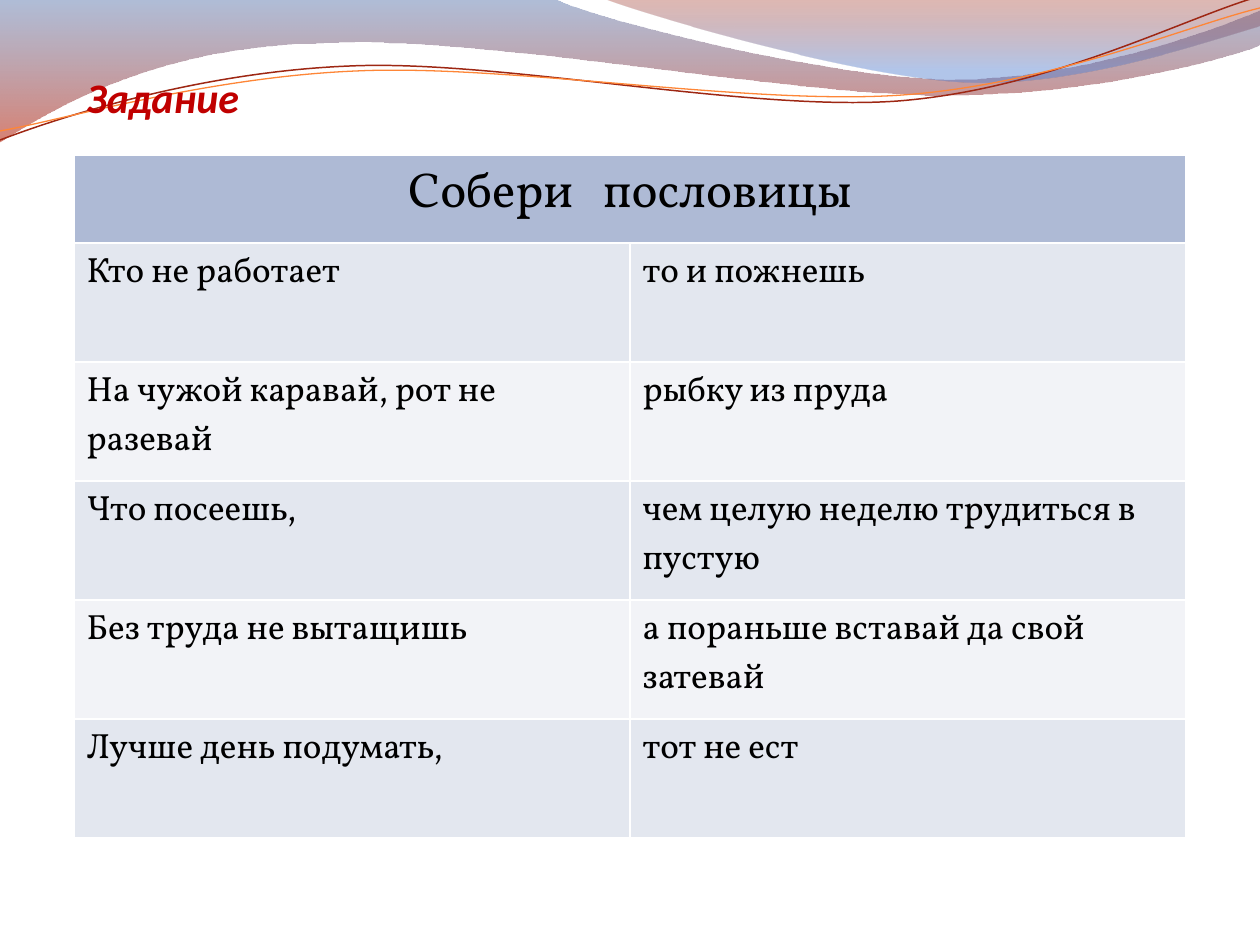
from lxml import etree
from pptx import Presentation
from pptx.dml.color import RGBColor
from pptx.enum.text import MSO_ANCHOR, MSO_AUTO_SIZE, PP_ALIGN
from pptx.oxml.ns import qn
from pptx.util import Emu, Pt

LEFT, CENTER = PP_ALIGN.LEFT, PP_ALIGN.CENTER
TOP = MSO_ANCHOR.TOP
NO_AUTOFIT = MSO_AUTO_SIZE.NONE

EMU_PER_PX = 914400 / 126
TITLE_ONLY = 5

# A path is a list of points (lines) and triples of points (cubic curves).
WIDE_WAVE = [
    (0, 0), (554, -1),
    ((600, 21), (837, 79), (955, 79)), ((1075, 79), (1207, 33), (1260, 11)),
    (1261, 45),
    ((1239, 55), (1096, 96), (940, 95)), ((784, 95), (481, 35), (324, 43)),
    ((163, 45), (58, 105), (-1, 142)),
]
RIGHT_WAVE = [
    (604, -1),
    ((641, 14), (859, 78), (969, 82)), ((1079, 86), (1211, 40), (1260, 26)),
    (1260, 0),
]
RED_STRAND = [
    (0, 140),
    ((60, 117), (199, 72), (349, 66)), ((498, 59), (747, 112), (898, 101)),
    ((1050, 89), (1182, 19), (1257, -3)),
]
ORANGE_STRAND = [
    (0, 131),
    ((59, 121), (207, 77), (357, 71)), ((508, 64), (752, 106), (903, 95)),
    ((1053, 84), (1186, 26), (1260, 8)),
]

HEADING_PARTS = ("Собери", " ", "пословицы")
HEADING_GAP_SPACING = 1150  # hundredths of a point
PROVERB_HALVES = [
    ("Кто не работает", "то и пожнешь"),
    ("На чужой каравай, рот не разевай", "рыбку из пруда"),
    ("Что посеешь,", "чем целую неделю трудиться в пустую"),
    ("Без труда не вытащишь", "а пораньше вставай да свой затевай"),
    ("Лучше день подумать,", "тот не ест"),
]
HEADING_FILL = "AEBAD5"
BAND_FILLS = ("E3E7EF", "F2F3F7")
HEADING_HEIGHT, ROW_HEIGHT, COLUMN_WIDTH = 88, 119, 556


def px(length):
    return Emu(round(length * EMU_PER_PX))


def rgb(value):
    return RGBColor.from_string(value)


def write(frame, parts, align, color, **font_values):
    """Fill the first paragraph with one run for each part; return the runs."""
    paragraph = frame.paragraphs[0]
    paragraph.alignment = align
    for part in parts:
        run = paragraph.add_run()
        run.text = part
        run.font.color.rgb = rgb(color)
        for attribute, value in font_values.items():
            setattr(run.font, attribute, value)
    return paragraph.runs


def bend(outline, path):
    """Turn the lines through each triple of points into one cubic curve."""
    lines = outline.element.spPr.iter(qn("a:lnTo"))
    for step, line in zip(path[1:], _grouped(list(lines), path[1:])):
        if len(step) == 3:
            first, *others = line
            first.tag = qn("a:cubicBezTo")
            for other in others:
                first.append(other[0])
                other.getparent().remove(other)


def _grouped(lines, steps):
    remaining = iter(lines)
    return [[next(remaining) for _ in range(3 if len(step) == 3 else 1)]
            for step in steps]


def add_outline(slide, path, close):
    start, *steps = path
    points = [point for step in steps
              for point in (step if len(step) == 3 else [step])]
    builder = slide.shapes.build_freeform(*map(px, start))
    builder.add_line_segments([(px(x), px(y)) for x, y in points], close=close)
    outline = builder.convert_to_shape()
    outline.shadow.inherit = False
    # lxml keeps an element's class, so curves are rebuilt as new elements.
    geometry = outline.element.spPr.find(".//" + qn("a:path"))
    lines = geometry.findall(qn("a:lnTo"))
    for step, group in zip(steps, _grouped(lines, steps)):
        if len(step) == 3:
            curve = etree.Element(qn("a:cubicBezTo"))
            group[0].addprevious(curve)
            for line in group:
                curve.append(line[0])
                geometry.remove(line)
    return outline


def add_wave(slide, path, stops):
    """Add a vertical gradient area; stops are (position, colour, opacity %)."""
    wave = add_outline(slide, path, close=True)
    wave.line.fill.background()
    wave.fill.gradient()
    wave.fill.gradient_angle = 270
    for stop, (position, color, _) in zip(wave.fill.gradient_stops, stops):
        stop.position = position
        stop.color.rgb = rgb(color)
    colors = wave.element.spPr.find(qn("a:gradFill")).iter(qn("a:srgbClr"))
    for color_element, (_, _, opacity) in zip(colors, stops):
        etree.SubElement(color_element, qn("a:alpha"), val=str(opacity * 1000))


def add_strand(slide, path, color, width):
    strand = add_outline(slide, path, close=False)
    strand.fill.background()
    strand.line.color.rgb = rgb(color)
    strand.line.width = Pt(width)


def format_title(title):
    title.left, title.top, title.width, title.height = map(px, (74, 65, 297, 115))
    frame = title.text_frame
    frame.auto_size = NO_AUTOFIT
    frame.vertical_anchor = TOP
    write(frame, ["Задание"], LEFT, "C00000",
          name="Calibri", size=Pt(24), bold=True, italic=True)


def format_cell(cell, fill):
    """Give the cell white borders and a solid fill."""
    properties = cell._tc.get_or_add_tcPr()
    for side in "LRTB":
        border = etree.SubElement(properties, qn(f"a:ln{side}"), w=str(Pt(1)))
        solid = etree.SubElement(border, qn("a:solidFill"))
        etree.SubElement(solid, qn("a:srgbClr"), val="FFFFFF")
    cell.fill.solid()
    cell.fill.fore_color.rgb = rgb(fill)


def add_proverb_table(slide):
    row_count = len(PROVERB_HALVES) + 1
    height = HEADING_HEIGHT + ROW_HEIGHT * len(PROVERB_HALVES)
    table = slide.shapes.add_table(
        row_count, 2, px(74), px(155), px(2 * COLUMN_WIDTH), px(height)).table
    table.first_row = table.horz_banding = False
    for column in table.columns:
        column.width = px(COLUMN_WIDTH)
    for row in table.rows:
        row.height = px(ROW_HEIGHT)
    table.rows[0].height = px(HEADING_HEIGHT)

    heading = table.cell(0, 0)
    heading.merge(table.cell(0, 1))
    for column in (0, 1):
        format_cell(table.cell(0, column), HEADING_FILL)
    _, gap, _ = write(heading.text_frame, HEADING_PARTS, CENTER, "000000",
                      name="Vollkorn", size=Pt(28))
    gap._r.get_or_add_rPr().set("spc", str(HEADING_GAP_SPACING))

    for row, halves in enumerate(PROVERB_HALVES, start=1):
        for column, half in enumerate(halves):
            cell = table.cell(row, column)
            format_cell(cell, BAND_FILLS[(row - 1) % 2])
            write(cell.text_frame, [half], LEFT, "000000",
                  name="Vollkorn", size=Pt(20))


def main():
    deck = Presentation()
    deck.slide_width, deck.slide_height = px(1260), px(945)
    slide = deck.slides.add_slide(deck.slide_layouts[TITLE_ONLY])
    add_wave(slide, WIDE_WAVE, [(0, "4F6EA8", 45), (1, "B61A00", 55)])
    add_wave(slide, RIGHT_WAVE, [(0, "951500", 30), (0.8, "5681D1", 45)])
    add_strand(slide, RED_STRAND, "9E2713", 0.85)
    add_strand(slide, ORANGE_STRAND, "FE8637", 0.75)
    title = slide.shapes.title
    format_title(title)
    title.element.getparent().append(title.element)  # in front of the waves
    add_proverb_table(slide)
    deck.save("out.pptx")


if __name__ == "__main__":
    main()
